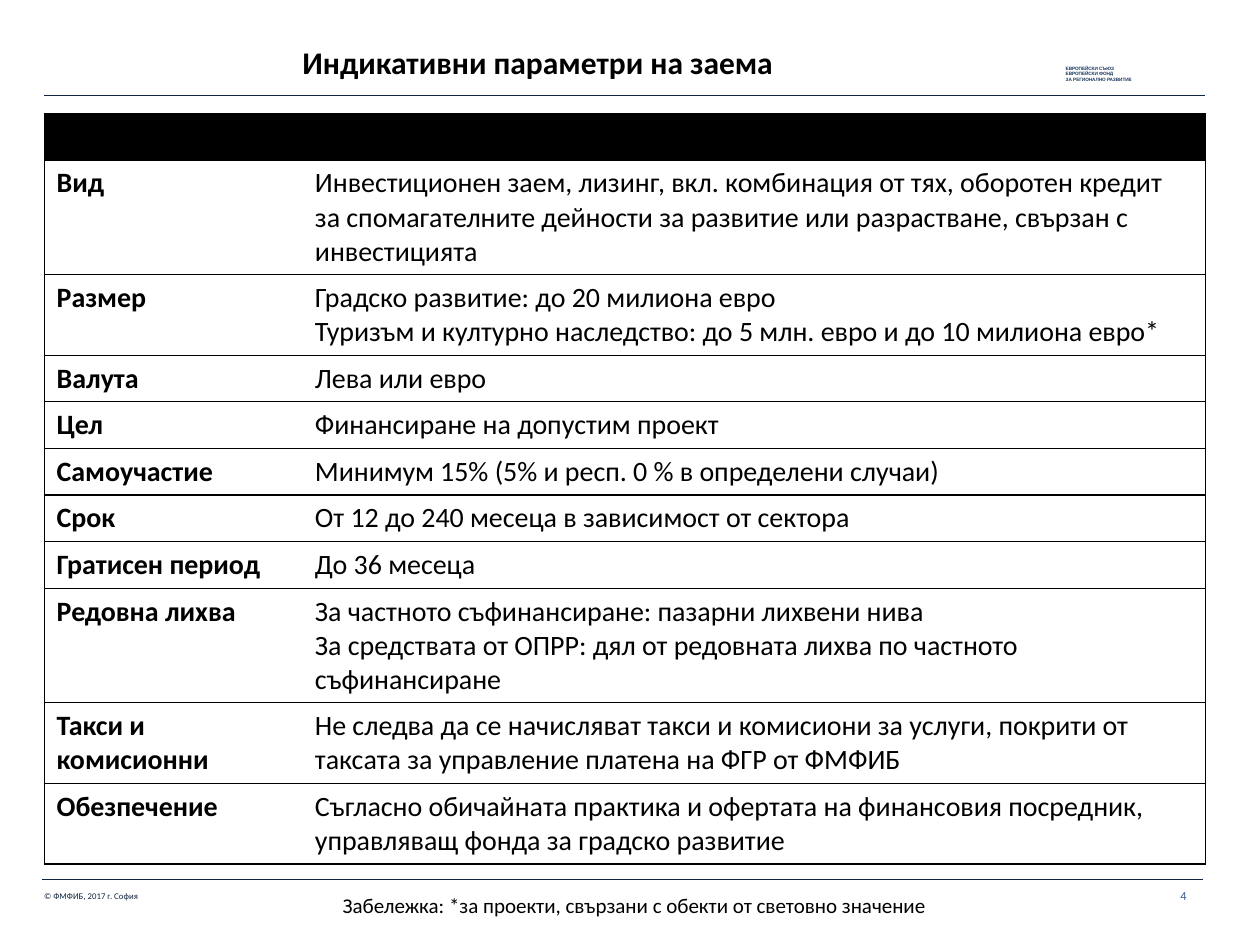
import pptx
import pptx.util
import pptx.dml.color
import pptx.enum.shapes
import pptx.enum.text
import pptx.oxml
import pptx.oxml.ns
from pptx.util import Inches

BLACK, WHITE, NAVY = "000000", "FFFFFF", "0F243E"
LINE_HEIGHT, CELL_PADDING = 0.27, 0.1

HEADER = ("", "", 1)
TERMS = [
    ("Вид", "Инвестиционен заем, лизинг, вкл. комбинация от тях, оборотен кредит "
     "за спомагателните дейности за развитие или разрастване, свързан с инвестицията", 3),
    ("Размер", "Градско развитие: до 20 милиона евро\n"
     "Туризъм и културно наследство: до 5 млн. евро и до 10 милиона евро*", 2),
    ("Валута", "Лева или евро", 1),
    ("Цел", "Финансиране на допустим проект", 1),
    ("Самоучастие", "Минимум 15% (5% и респ. 0 % в определени случаи)", 1),
    ("Срок", "От 12 до 240 месеца в зависимост от сектора", 1),
    ("Гратисен период", "До 36 месеца", 1),
    ("Редовна лихва", "За частното съфинансиране: пазарни лихвени нива\n"
     "За средствата от ОПРР: дял от редовната лихва по частното съфинансиране", 3),
    ("Такси и комисионни", "Не следва да се начисляват такси и комисиони за услуги, "
     "покрити от таксата за управление платена на ФГР от ФМФИБ", 2),
    ("Обезпечение", "Съгласно обичайната практика и офертата на финансовия посредник, "
     "управляващ фонда за градско развитие", 2),
]


def color(value):
    return pptx.dml.color.RGBColor.from_string(value)


def write(frame, text, size=16, bold=False, ink=BLACK, font="Calibri", align=None, after=0):
    for index, line in enumerate(text.split("\n")):
        para = frame.paragraphs[0] if index == 0 else frame.add_paragraph()
        para.font.size = pptx.util.Pt(size)
        para.font.bold = bold
        para.font.name = font
        para.font.color.rgb = color(ink)
        para.alignment = align
        para.space_after = pptx.util.Pt(after)
        if line:
            span = para.add_run()
            span.text = line
            span.font.size = pptx.util.Pt(size)
            span.font.bold = bold
            span.font.name = font
            span.font.color.rgb = color(ink)


def set_borders(cell, visible):
    properties = cell._tc.get_or_add_tcPr()
    for index, side in enumerate("LRTB"):
        fill = (f'<a:solidFill><a:srgbClr val="{BLACK}"/></a:solidFill>'
                if side in visible else "<a:noFill/>")
        properties.insert(index, pptx.oxml.parse_xml(
            f'<a:ln{side} {pptx.oxml.ns.nsdecls("a")} w="9525">{fill}</a:ln{side}>'))


class LoanSlide:
    def __init__(self, deck):
        self.page = deck.slides.add_slide(deck.slide_layouts[6])

    def rule(self, left, top, right):
        line = self.page.shapes.add_connector(
            pptx.enum.shapes.MSO_CONNECTOR.STRAIGHT,
            Inches(left), Inches(top), Inches(right), Inches(top))
        line.line.color.rgb = color(NAVY)
        line.line.width = pptx.util.Pt(0.75)
        line._element.spPr.append(pptx.oxml.parse_xml(
            f'<a:effectLst {pptx.oxml.ns.nsdecls("a")}/>'))

    def text(self, text, left, top, width, height, inset=False, grow=False, **style):
        box = self.page.shapes.add_textbox(
            Inches(left), Inches(top), Inches(width), Inches(height))
        frame = box.text_frame
        frame.word_wrap = True
        if grow:
            frame.auto_size = pptx.enum.text.MSO_AUTO_SIZE.SHAPE_TO_FIT_TEXT
        if not inset:
            frame.margin_left = frame.margin_right = 0
            frame.margin_top = frame.margin_bottom = 0
        write(frame, text, **style)

    def table(self, rows, left, top, widths):
        heights = [LINE_HEIGHT * lines + CELL_PADDING for *_, lines in rows]
        table = self.page.shapes.add_table(
            len(rows), len(widths), Inches(left), Inches(top),
            Inches(sum(widths)), Inches(sum(heights))).table
        table.horz_banding = False
        for column, width in zip(table.columns, widths):
            column.width = Inches(width)
        for index, (label, value, _) in enumerate(rows):
            table.rows[index].height = Inches(heights[index])
            for position, text in enumerate((label, value)):
                cell = table.cell(index, position)
                set_borders(cell, "LTB" if position == 0 else "RTB")
                cell.fill.solid()
                cell.fill.fore_color.rgb = color(BLACK if index == 0 else WHITE)
                write(cell.text_frame, text, bold=position == 0)


def main():
    deck = pptx.Presentation()
    deck.slide_width, deck.slide_height = Inches(10), Inches(7.5)
    slide = LoanSlide(deck)
    slide.rule(0.35, 0.76, 9.56)
    slide.rule(0.33, 6.98, 9.55)
    slide.text("ЕВРОПЕЙСКИ СЪЮЗ\nЕВРОПЕЙСКИ ФОНД\nЗА РЕГИОНАЛНО РАЗВИТИЕ",
               8.36, 0.47, 0.75, 0.24, inset=True, grow=True,
               size=2.7, bold=True, ink="17375E", font="Arial")
    slide.text("© ФМФИБ, 2017 г. София", 0.35, 7.07, 1.04, 0.14, size=5, ink=NAVY)
    slide.text("4", 9.27, 7, 0.39, 0.3, inset=True, size=7, ink="376092")
    slide.text("Индикативни параметри на заема", 2.4, 0.34, 5.12, 0.3,
               grow=True, size=18, bold=True)
    slide.table([HEADER] + TERMS, 0.35, 0.9, (2.05, 7.17))
    slide.text("Забележка: *за проекти, свързани с обекти от световно значение",
               2.72, 7.08, 5.98, 0.2, grow=True, size=12, after=3,
               align=pptx.enum.text.PP_ALIGN.JUSTIFY)
    deck.save("out.pptx")


if __name__ == "__main__":
    main()
